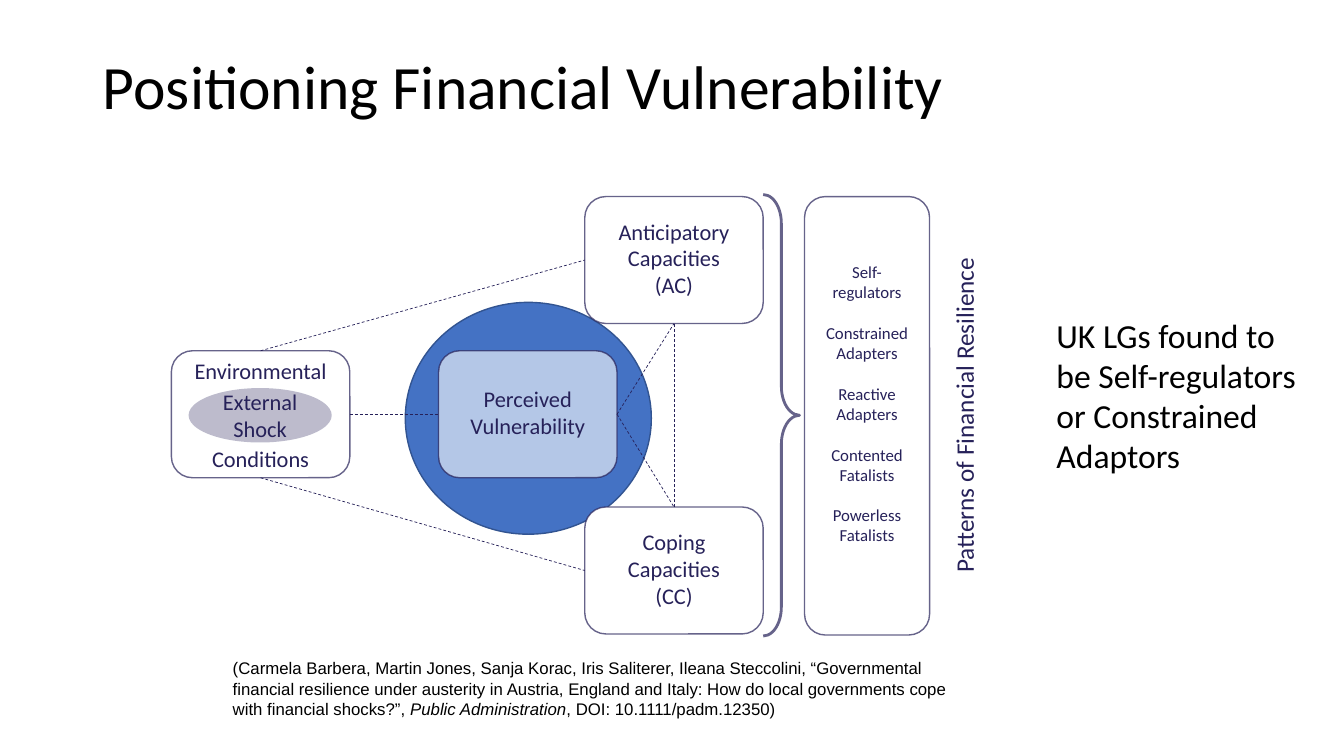
import pptx
import pptx.util
import pptx.dml.color
import pptx.enum.dml
import pptx.enum.shapes
import pptx.enum.text
import pptx.oxml
import pptx.oxml.ns

Inches = pptx.util.Inches
Pt = pptx.util.Pt
RGBColor = pptx.dml.color.RGBColor
SHAPE = pptx.enum.shapes.MSO_SHAPE
ALIGN = pptx.enum.text.PP_ALIGN
ANCHOR = pptx.enum.text.MSO_ANCHOR

INDIGO = RGBColor(0x26, 0x21, 0x59)
BLUE = RGBColor(0x44, 0x72, 0xC4)
DARK_BLUE = RGBColor(0x32, 0x54, 0x91)
PALE_BLUE = RGBColor(0xB4, 0xC7, 0xE7)
WHITE = RGBColor(0xFF, 0xFF, 0xFF)
BLACK = RGBColor(0, 0, 0)

BOX_W, BOX_H = 1.77, 1.26
PATTERNS = ["Self-regulators", "Constrained Adapters", "Reactive Adapters",
            "Contented Fatalists", "Powerless Fatalists"]


def set_alpha(parent, percent):
    for color in parent.iter(pptx.oxml.ns.qn("a:srgbClr")):
        alpha = pptx.oxml.parse_xml(
            '<a:alpha %s val="%d"/>' % (pptx.oxml.ns.nsdecls("a"), percent * 1000))
        color.append(alpha)


def add_runs(p, runs, size, color, font="Calibri"):
    for text, italic in runs:
        r = p.add_run()
        r.text = text
        r.font.name = font
        r.font.size = Pt(size)
        r.font.italic = italic
        r.font.color.rgb = color


def fill_text(tf, lines, size, gap=0, anchor=ANCHOR.MIDDLE):
    tf.word_wrap = True
    tf.vertical_anchor = anchor
    for i, line in enumerate(lines):
        p = tf.add_paragraph() if i else tf.paragraphs[0]
        p.alignment = ALIGN.CENTER
        if i:
            p.space_before = Pt(gap)
        add_runs(p, [(line, False)], size, INDIGO)


def add_preset(s, kind, at, fill=None, line=None, width=1, line_alpha=100):
    sp = s.shapes.add_shape(kind, *map(Inches, at))
    sp.shadow.inherit = False
    if fill is None:
        sp.fill.background()
    else:
        sp.fill.solid()
        sp.fill.fore_color.rgb = fill
    if line is None:
        sp.line.fill.background()
    else:
        sp.line.color.rgb = line
        sp.line.width = Pt(width)
        if line_alpha < 100:
            set_alpha(sp.line._ln, line_alpha)
    return sp


def add_box(s, at, lines, size=16, fill=WHITE, gap=0, anchor=ANCHOR.MIDDLE, bottom=0.04):
    sp = add_preset(s, SHAPE.ROUNDED_RECTANGLE, at, fill, INDIGO, 1, 70)
    tf = sp.text_frame
    tf.margin_top = 0
    tf.margin_bottom = Inches(bottom)
    fill_text(tf, lines, size, gap, anchor)


def add_dashed_line(s, start, end):
    kind = pptx.enum.shapes.MSO_CONNECTOR.STRAIGHT
    line = s.shapes.add_connector(kind, *map(Inches, start + end))
    line.line.color.rgb = INDIGO
    line.line.width = Pt(0.5)
    line.line.dash_style = pptx.enum.dml.MSO_LINE.DASH
    line._element.spPr.append(
        pptx.oxml.parse_xml("<a:effectLst %s/>" % pptx.oxml.ns.nsdecls("a")))


def add_text(s, at, runs, size, color, font="Calibri", align=ALIGN.LEFT, rotation=0):
    sp = s.shapes.add_textbox(*map(Inches, at))
    sp.rotation = rotation
    tf = sp.text_frame
    tf.word_wrap = True
    tf.auto_size = pptx.enum.text.MSO_AUTO_SIZE.SHAPE_TO_FIT_TEXT
    p = tf.paragraphs[0]
    p.alignment = align
    add_runs(p, runs, size, color, font)


def add_title(s, text):
    sp = s.shapes.title
    sp.left, sp.top, sp.width, sp.height = map(Inches, (0.92, 0.16, 11.5, 1.45))
    tf = sp.text_frame
    tf.vertical_anchor = ANCHOR.MIDDLE
    p = tf.paragraphs[0]
    p.alignment = ALIGN.LEFT
    p.line_spacing = 0.9
    add_runs(p, [(text, False)], 44, BLACK)


def add_framework(s):
    env_x, mid_x, cap_x = 1.7, 4.35, 5.8
    top_y, mid_y, low_y = 1.95, 3.48, 5.03
    env_mid, cap_mid = env_x + BOX_W / 2, cap_x + BOX_W / 2
    axis_y = mid_y + BOX_H / 2
    vulnerability_right = (mid_x + BOX_W, axis_y)
    ac_bottom = (cap_mid, top_y + BOX_H)
    cc_top = (cap_mid, low_y)

    add_preset(s, SHAPE.OVAL, (4.02, 3, 2.44, 2.3), BLUE, DARK_BLUE)
    add_box(s, (cap_x, top_y, BOX_W, BOX_H), ["Anticipatory Capacities", "(AC)"])
    add_box(s, (cap_x, low_y, BOX_W, BOX_H), ["Coping Capacities", "(CC)"])
    add_box(s, (mid_x, mid_y, BOX_W, BOX_H), ["Perceived Vulnerability"], fill=PALE_BLUE)
    add_box(s, (env_x, mid_y, BOX_W, BOX_H), ["Environmental", "Conditions"],
            gap=44, anchor=ANCHOR.TOP)
    for start, end in [
        ((env_x + BOX_W, axis_y), (mid_x, axis_y)),
        ((env_mid, mid_y), (cap_x, top_y + BOX_H / 2)),
        ((env_mid, mid_y + BOX_H), (cap_x, low_y + BOX_H / 2)),
        (vulnerability_right, ac_bottom),
        (vulnerability_right, cc_top),
        (cc_top, ac_bottom),
    ]:
        add_dashed_line(s, start, end)

    shock = add_preset(s, SHAPE.OVAL, (1.87, 3.85, 1.42, 0.54), INDIGO)
    set_alpha(shock._element.spPr, 30)
    fill_text(shock.text_frame, ["External Shock"], 16)


def add_patterns(s):
    brace = add_preset(s, SHAPE.RIGHT_BRACE, (7.57, 1.93, 0.36, 4.38), None, INDIGO, 2, 70)
    brace.adjustments[0] = 0.8
    brace.adjustments[1] = 0.5
    add_box(s, (7.98, 1.95, 1.24, 4.35), PATTERNS, size=12, gap=14.6, bottom=0.24)
    add_text(s, (7.39, 3.92, 4.34, 0.4), [("Patterns of Financial Resilience", False)],
             18, INDIGO, align=ALIGN.CENTER, rotation=270)


def main():
    prs = pptx.Presentation()
    prs.slide_width, prs.slide_height = Inches(13.33), Inches(7.5)
    s = prs.slides.add_slide(prs.slide_layouts[5])
    add_title(s, "Positioning Financial Vulnerability")
    add_framework(s)
    add_patterns(s)
    add_text(s, (2.21, 6.48, 7.55, 0.71), [
        ("(Carmela Barbera, Martin Jones, Sanja Korac, Iris Saliterer, Ileana Steccolini, "
         "“Governmental financial resilience under austerity in Austria, England and Italy: "
         "How do local governments cope with financial shocks?”, ", False),
        ("Public Administration", True),
        (", DOI: 10.1111/padm.12350)", False),
    ], 12, BLACK, font="Arial")
    add_text(s, (10.38, 3.07, 2.67, 1.72),
             [("UK LGs found to be Self-regulators or Constrained Adaptors", False)], 24, BLACK)
    prs.save("out.pptx")


if __name__ == "__main__":
    main()
